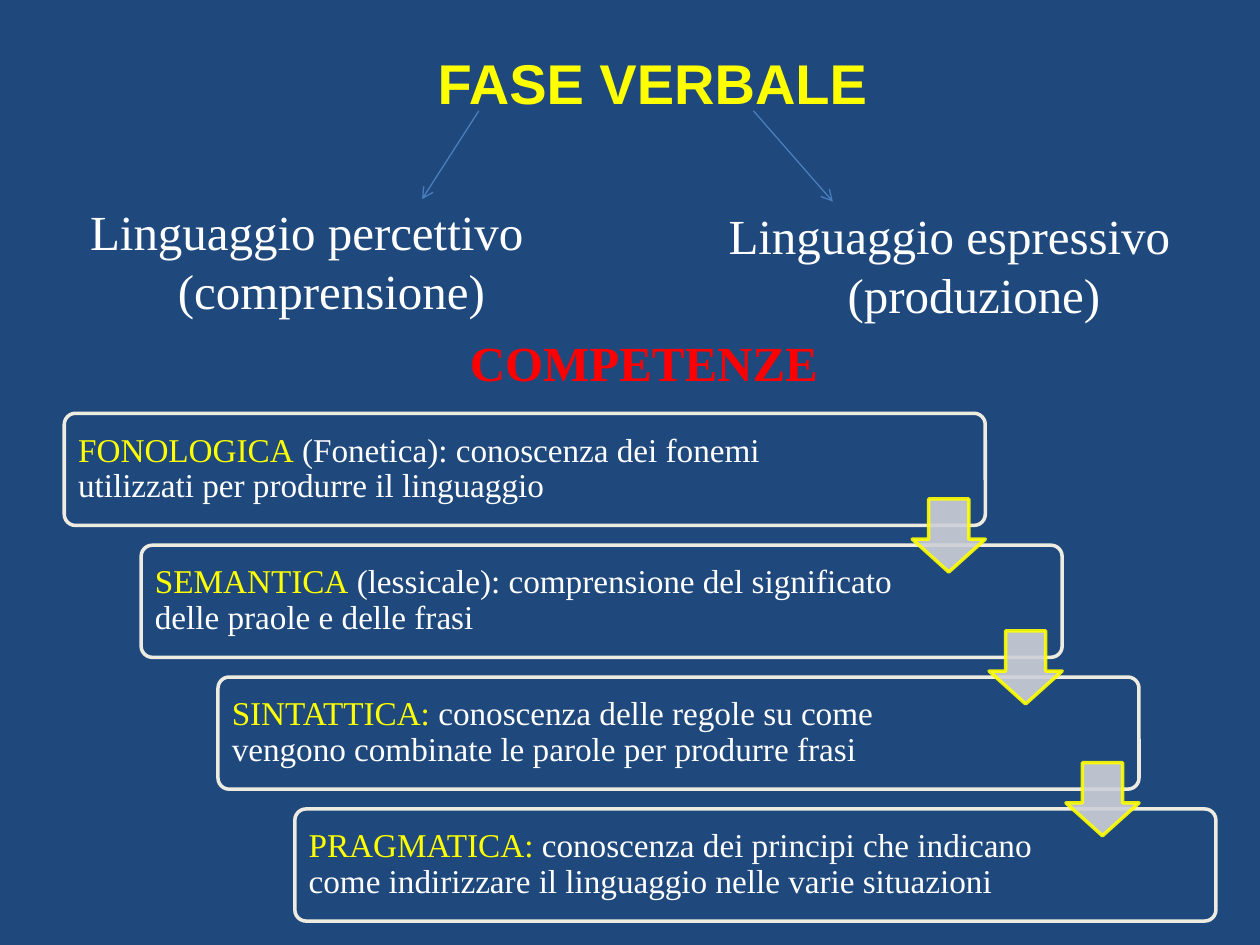
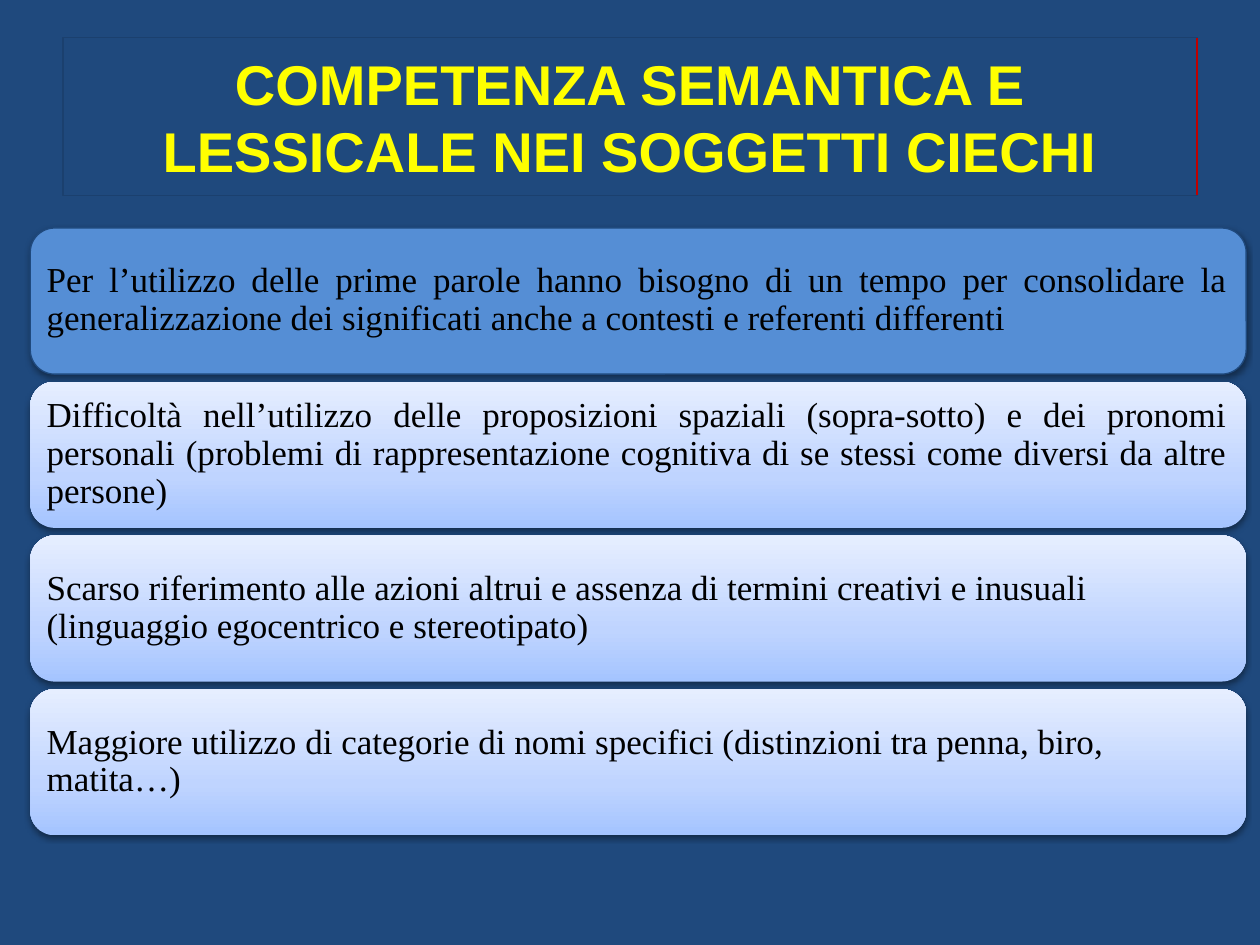
from lxml import etree
from pptx import Presentation
from pptx.dml.color import RGBColor
from pptx.enum.shapes import MSO_CONNECTOR, MSO_SHAPE
from pptx.enum.text import MSO_ANCHOR, PP_ALIGN
from pptx.oxml import parse_xml
from pptx.oxml.ns import nsdecls, qn
from pptx.util import Inches, Pt

ROUND, DOWN = MSO_SHAPE.ROUNDED_RECTANGLE, MSO_SHAPE.DOWN_ARROW
STRAIGHT = MSO_CONNECTOR.STRAIGHT
TOP, MIDDLE = MSO_ANCHOR.TOP, MSO_ANCHOR.MIDDLE
LEFT, CENTER, JUSTIFY = PP_ALIGN.LEFT, PP_ALIGN.CENTER, PP_ALIGN.JUSTIFY

COLORS = {
    "background": "1F497D", "title": "FFFF00", "white": "FFFFFF", "black": "000000",
    "red": "FF0000", "edge": "C00000", "frame": "1B406E", "connector": "4B7EBC",
    "step_line": "EEECE1", "arrow": "CDD0D7", "card": "558ED5",
    "grad_bottom": "A4C4FF", "grad_middle": "BFD4FF", "grad_top": "E6EEFF",
}
RGB = {name: RGBColor.from_string(value) for name, value in COLORS.items()}
TITLE_FONT, BODY_FONT = "Arial", "Times New Roman"
TITLE_SIZE = 32

GRADIENT = (
    f'<a:gradFill {nsdecls("a")} rotWithShape="1"><a:gsLst>'
    f'<a:gs pos="0"><a:srgbClr val="{COLORS["grad_bottom"]}"/></a:gs>'
    f'<a:gs pos="35000"><a:srgbClr val="{COLORS["grad_middle"]}"/></a:gs>'
    f'<a:gs pos="100000"><a:srgbClr val="{COLORS["grad_top"]}"/></a:gs>'
    '</a:gsLst><a:lin ang="16200000" scaled="0"/></a:gradFill>'
)
SHADOW = (
    f'<a:outerShdw {nsdecls("a")} blurRad="{Pt(3.1)}" dist="{Pt(1.6)}" dir="5400000" '
    f'rotWithShape="0"><a:srgbClr val="{COLORS["black"]}"><a:alpha val="38000"/>'
    '</a:srgbClr></a:outerShdw>'
)


def add_text(s, box, paragraphs, size, font=BODY_FONT, bold=False, align=CENTER,
             anchor=TOP, inset=None, spacing=None):
    """Add a text box; each paragraph is a list of (text, colour name) runs."""
    sp = s.shapes.add_textbox(*map(Inches, box))
    tf = sp.text_frame
    tf.word_wrap = True
    tf.vertical_anchor = anchor
    if inset is not None:
        tf.margin_left = tf.margin_right = Inches(inset)
        tf.margin_top = tf.margin_bottom = Inches(inset)
    for i, runs in enumerate(paragraphs):
        p = tf.paragraphs[0] if i == 0 else tf.add_paragraph()
        p.alignment = align
        p.line_spacing = spacing
        for text, color in runs:
            r = p.add_run()
            r.text = text
            r.font.name = font
            r.font.size = Pt(size)
            r.font.bold = bold
            r.font.color.rgb = RGB[color]
    return sp


def add_line(s, start, end, color):
    c = s.shapes.add_connector(STRAIGHT, *map(Inches, start + end))
    c.line.color.rgb = RGB[color]
    c.line.width = Pt(0.75)
    etree.SubElement(c._element.spPr, qn("a:effectLst"))
    return c


prs = Presentation()
prs.slide_width, prs.slide_height = Inches(10), Inches(7.5)

# Titles and background
TITLES = [
    ("FASE VERBALE", (0.68, 0.03, 9, 1.25)),
    ("COMPETENZA SEMANTICA E LESSICALE NEI SOGGETTI CIECHI", (0.5, 0.3, 9, 1.25)),
]
slides, titles = [], []
for text, box in TITLES:
    s = prs.slides.add_slide(prs.slide_layouts[6])
    s.background.fill.solid()
    s.background.fill.fore_color.rgb = RGB["background"]
    slides.append(s)
    titles.append(add_text(s, box, [[(text, "title")]], TITLE_SIZE, TITLE_FONT, True,
                           anchor=MIDDLE))

# Slide 1: two kinds of language
s = slides[0]
LANGUAGES = [
    ((5.98, 0.88), (6.61, 1.6), (5.21, 1.58), "Linguaggio espressivo", "(produzione)"),
    ((3.8, 0.88), (3.35, 1.58), (0.11, 1.55), "Linguaggio percettivo", "(comprensione)"),
]
for start, end, corner, name, meaning in LANGUAGES:
    c = add_line(s, start, end, "connector")
    etree.SubElement(c.line._get_or_add_ln(), qn("a:tailEnd"), type="arrow")
    sp = add_text(s, corner + (4.65, 1.04), [[(name, "white")], [(meaning, "white")]], 28)
    sp.text_frame.paragraphs[1]._p.get_or_add_pPr().set("marL", str(Inches(0.39)))

# Slide 1: staircase of competences
STEPS = [
    ("FONOLOGICA", " (Fonetica): conoscenza dei fonemi utilizzati per produrre il linguaggio"),
    ("SEMANTICA", " (lessicale): comprensione del significato delle praole e delle frasi"),
    ("SINTATTICA: ",
     "conoscenza delle regole su come vengono combinate le parole per produrre frasi"),
    ("PRAGMATICA: ", "conoscenza dei principi che indicano come indirizzare il linguaggio "
                     "nelle varie situazioni"),
]
corners = [(0.51 + 0.61 * i, 3.28 + 3.14 / 3 * i) for i in range(len(STEPS))]
for i, ((x, y), (name, meaning)) in enumerate(zip(corners, STEPS)):
    sp = s.shapes.add_shape(ROUND, Inches(x), Inches(y), Inches(7.31), Inches(0.89))
    sp.adjustments[0] = 0.1
    sp.shadow.inherit = False
    sp.fill.solid()
    sp.fill.fore_color.rgb = RGB["background"]
    sp.line.color.rgb = RGB["step_line"]
    sp.line.width = Pt(2)
    width = 6.28 if i == 0 else 6.07
    add_text(s, (x + 0.03, y + 0.03, width, 0.83), [[(name, "title"), (meaning, "white")]],
             19, align=LEFT, anchor=MIDDLE, inset=0.08, spacing=0.9)

for x, y in corners[:-1]:
    sp = s.shapes.add_shape(DOWN, Inches(x + 6.73), Inches(y + 0.68), Inches(0.58), Inches(0.58))
    sp.adjustments[0], sp.adjustments[1] = 0.45, 0.55
    sp.adjustments[0], sp.adjustments[1] = 0.55, 0.45
    sp.shadow.inherit = False
    sp.fill.solid()
    sp.fill.fore_color.rgb = RGB["arrow"]
    sp.line.color.rgb = RGB["title"]
    sp.line.width = Pt(2)
    for color in sp._element.spPr.iter(qn("a:srgbClr")):
        etree.SubElement(color, qn("a:alpha"), val="90000")

add_text(s, (3.4, 2.59, 3.42, 0.57), [[("COMPETENZE", "red")]], 28, bold=True)

# Slide 2: title frame with a red right edge
s = slides[1]
titles[1].line.color.rgb = RGB["frame"]
titles[1].line.width = Pt(0.75)
add_line(s, (9.5, 0.3), (9.5, 1.55), "edge")

# Slide 2: stacked cards
CARDS = [
    ("Per l’utilizzo delle prime parole hanno bisogno di un tempo per consolidare la "
     "generalizzazione dei significati anche a contesti e referenti differenti", JUSTIFY),
    ("Difficoltà nell’utilizzo delle proposizioni spaziali (sopra-sotto) e dei pronomi "
     "personali (problemi di rappresentazione cognitiva di se stessi come diversi da altre "
     "persone)", JUSTIFY),
    ("Scarso riferimento alle azioni altrui e assenza di termini creativi e inusuali "
     "(linguaggio egocentrico e stereotipato)", LEFT),
    ("Maggiore utilizzo di categorie di nomi specifici (distinzioni tra penna, biro, "
     "matita…)", LEFT),
]
for i, (text, align) in enumerate(CARDS):
    y = 1.81 + 1.22 * i
    sp = s.shapes.add_shape(ROUND, Inches(0.24), Inches(y), Inches(9.65), Inches(1.16))
    sp.fill.solid()
    sp.fill.fore_color.rgb = RGB["card"]
    spPr = sp._element.spPr
    if i == 0:
        sp.line.color.rgb = RGB["background"]
        sp.line.width = Pt(0.75)
    else:
        spPr.replace(spPr.find(qn("a:solidFill")), parse_xml(GRADIENT))
        sp.line.fill.background()
    sp.shadow.inherit = False
    spPr.find(qn("a:effectLst")).append(parse_xml(SHADOW))
    add_text(s, (0.29, y + 0.05, 9.53, 1.05), [[(text, "black")]], 20, align=align,
             anchor=MIDDLE, inset=0.08, spacing=0.9)

prs.save("out.pptx")
